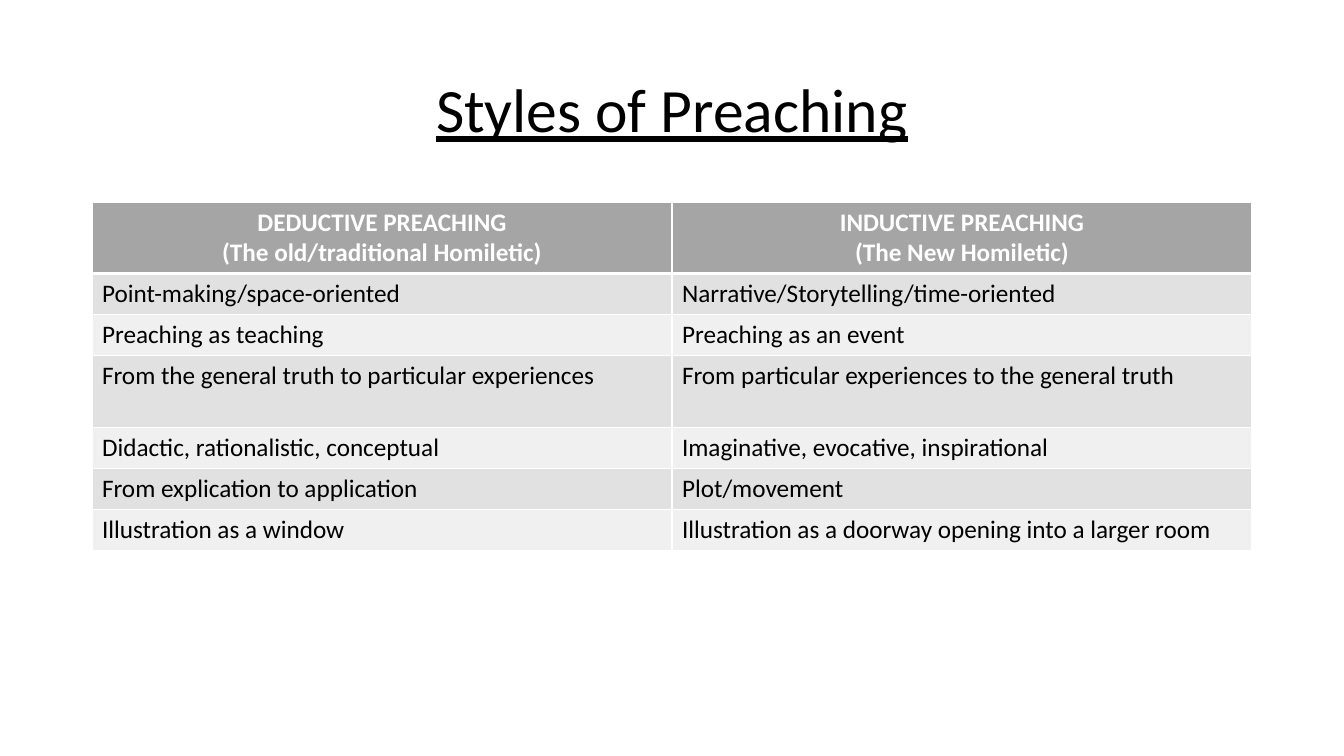
from dataclasses import dataclass

from lxml.etree import SubElement
from pptx import Presentation
from pptx.dml.color import RGBColor
from pptx.enum.text import MSO_ANCHOR as Anchor, PP_ALIGN as Align
from pptx.oxml.ns import qn
from pptx.util import Emu, Pt

TITLE = "Styles of Preaching"
HEADER = (
    "DEDUCTIVE PREACHING\n(The old/traditional Homiletic)",
    "INDUCTIVE PREACHING\n(The New Homiletic)",
)
CONTRASTS = [
    ("Point-making/space-oriented", "Narrative/Storytelling/time-oriented"),
    ("Preaching as teaching", "Preaching as an event"),
    ("From the general truth to particular experiences",
     "From particular experiences to the general truth"),
    ("Didactic, rationalistic, conceptual", "Imaginative, evocative, inspirational"),
    ("From explication to application", "Plot/movement"),
    ("Illustration as a window", "Illustration as a doorway opening into a larger room"),
]

SLIDE_SIZE = (1344, 756)
TITLE_BOX = (92, 40, 1160, 146)
TABLE_LEFT, TABLE_TOP, TABLE_WIDTH = 92, 202, 1160
HEADER_HEIGHT, ROW_HEIGHT, TALL_HEIGHT = 70, 41, 72
TALL_ROW = 3


@dataclass(frozen=True)
class Theme:
    font: str = "Calibri"
    text: str = "000000"
    light: str = "FFFFFF"
    header: str = "A5A5A5"
    bands: tuple = ("E1E1E1", "F0F0F0")
    title_size: int = 44
    body_size: int = 18
    rule: int = 1
    header_rule: int = 3


THEME = Theme()


def px(n):
    return Emu(round(n * 914400 / 100.8))


def style_text(tf, size, color, bold=False, underline=False, align=Align.LEFT):
    for p in tf.paragraphs:
        p.alignment = align
        for r in p.runs:
            font = r.font
            font.name, font.size = THEME.font, Pt(size)
            font.bold, font.underline = bold, underline
            font.color.rgb = RGBColor.from_string(color)


def set_borders(cell, top, bottom):
    props = cell._tc.get_or_add_tcPr()
    widths = {"lnL": THEME.rule, "lnR": THEME.rule, "lnT": top, "lnB": bottom}
    for i, (side, width) in enumerate(widths.items()):
        line = SubElement(props, qn(f"a:{side}"), w=str(Pt(width)))
        fill = SubElement(line, qn("a:solidFill"))
        SubElement(fill, qn("a:srgbClr"), val=THEME.light)
        props.insert(i, line)


def add_title(slide):
    sp = slide.shapes.title
    sp.left, sp.top, sp.width, sp.height = map(px, TITLE_BOX)
    tf = sp.text_frame
    tf.text = TITLE
    tf.vertical_anchor = Anchor.MIDDLE
    tf.paragraphs[0].line_spacing = 0.9
    style_text(tf, THEME.title_size, THEME.text, underline=True, align=Align.CENTER)


def add_comparison(slide):
    rows = [HEADER, *CONTRASTS]
    heights = [HEADER_HEIGHT] + [ROW_HEIGHT] * len(CONTRASTS)
    heights[TALL_ROW] = TALL_HEIGHT
    table = slide.shapes.add_table(
        len(rows), len(HEADER), px(TABLE_LEFT), px(TABLE_TOP),
        px(TABLE_WIDTH), px(sum(heights))).table
    for column in table.columns:
        column.width = px(TABLE_WIDTH // len(HEADER))
    for i, (texts, height) in enumerate(zip(rows, heights)):
        table.rows[i].height = px(height)
        is_header = i == 0
        color = THEME.light if is_header else THEME.text
        fill = THEME.header if is_header else THEME.bands[(i - 1) % 2]
        top = THEME.header_rule if i == 1 else THEME.rule
        bottom = THEME.header_rule if is_header else THEME.rule
        for j, text in enumerate(texts):
            cell = table.cell(i, j)
            cell.text_frame.text = text
            cell.fill.solid()
            cell.fill.fore_color.rgb = RGBColor.from_string(fill)
            set_borders(cell, top, bottom)
            style_text(cell.text_frame, THEME.body_size, color, bold=is_header,
                       align=Align.CENTER if is_header else Align.LEFT)


def main():
    prs = Presentation()
    prs.slide_width, prs.slide_height = map(px, SLIDE_SIZE)
    slide = prs.slides.add_slide(prs.slide_layouts[5])
    add_title(slide)
    add_comparison(slide)
    prs.save("out.pptx")


if __name__ == "__main__":
    main()
